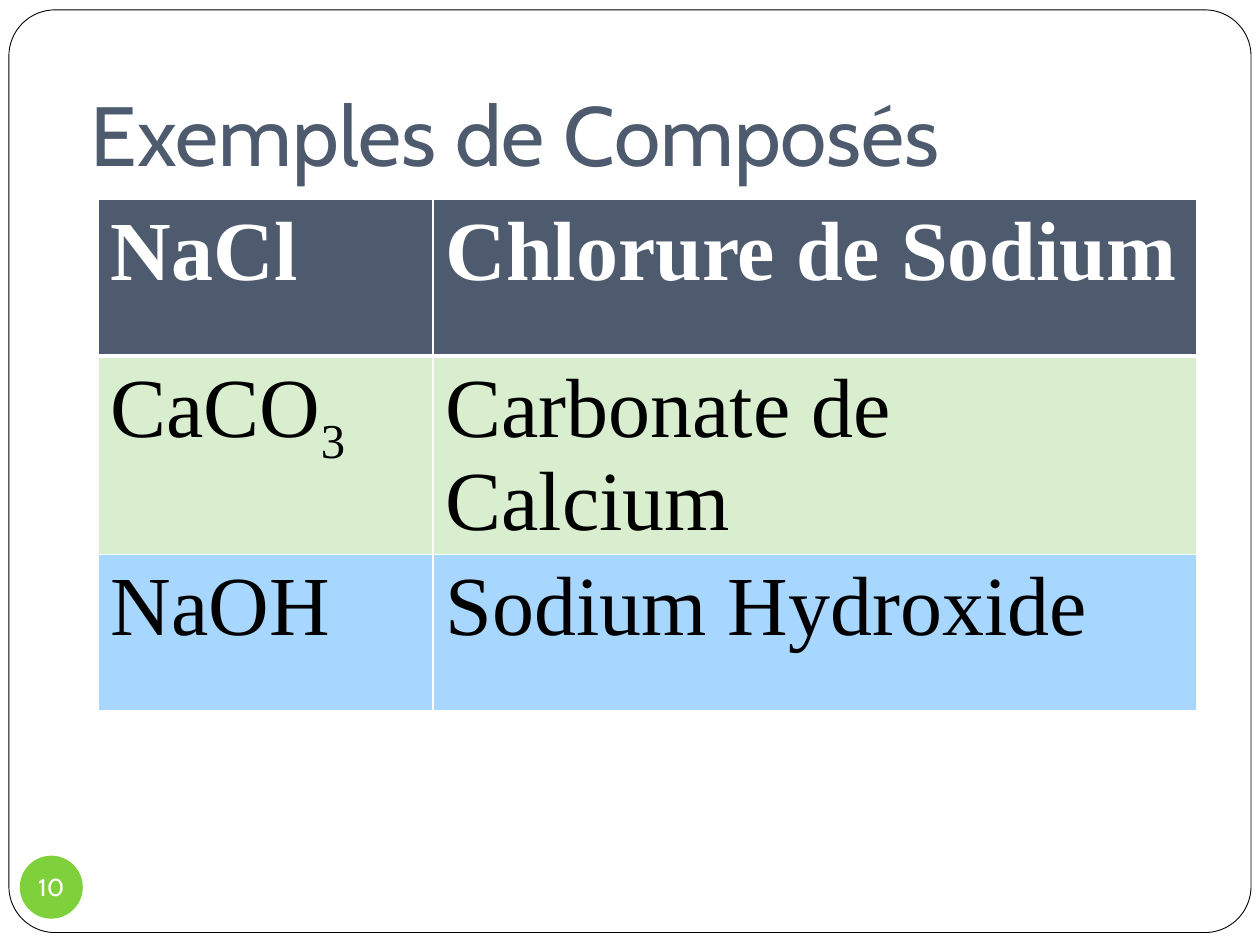
import pptx
import pptx.dml.color
import pptx.enum.shapes
import pptx.enum.text
import pptx.oxml
import pptx.oxml.ns
import pptx.util
from pptx.util import Cm

SLATE, GREEN, WHITE, BLACK = "4E5B6F", "7FD13B", "FFFFFF", "000000"
PALE_GREEN, PALE_BLUE = "D8EECE", "A7D6FF"
HEADING_FONT, TABLE_FONT = "Cabin", "Times New Roman"
# Each row: fill, text colour, bold, then cells of (text, subscript)
ROWS = [
    (SLATE, WHITE, True, [("NaCl", ""), ("Chlorure de Sodium", "")]),
    (PALE_GREEN, BLACK, False, [("CaCO", "3"), ("Carbonate de Calcium", "")]),
    (PALE_BLUE, BLACK, False, [("NaOH", ""), ("Sodium Hydroxide", "")]),
]


def color(value):
    return pptx.dml.color.RGBColor.from_string(value)


def add_text(paragraph, text, font, size, fill, bold=False, baseline=0):
    run = paragraph.add_run()
    run.text = text
    run.font.name = font
    run.font.size = pptx.util.Pt(size)
    run.font.bold = bold
    run.font.color.rgb = color(fill)
    if baseline:
        run.font._element.set("baseline", str(baseline * 1000))


def set_margins(text_frame, left, top, right, bottom):
    text_frame.margin_left, text_frame.margin_top = left, top
    text_frame.margin_right, text_frame.margin_bottom = right, bottom


def add_filled_shape(slide, kind, box, fill):
    shape = slide.shapes.add_shape(kind, *box)
    shape.shadow.inherit = False
    shape.fill.solid()
    shape.fill.fore_color.rgb = color(fill)
    shape.line.fill.background()
    return shape


def add_frame(slide, box):
    kind = pptx.enum.shapes.MSO_SHAPE.ROUNDED_RECTANGLE
    frame = add_filled_shape(slide, kind, box, WHITE)
    frame.adjustments[0] = 0.05
    frame.line.color.rgb = color(BLACK)
    frame.line.width = pptx.util.Pt(0.5)
    # Send behind the title placeholder
    frame._element.getparent().insert(2, frame._element)


def add_title(slide, box):
    title = slide.shapes.title
    title.left, title.top, title.width, title.height = box
    text_frame = title.text_frame
    text_frame.word_wrap = True
    text_frame.auto_size = pptx.enum.text.MSO_AUTO_SIZE.NONE
    text_frame.vertical_anchor = pptx.enum.text.MSO_ANCHOR.BOTTOM
    set_margins(text_frame, Cm(0.25), Cm(0.13), Cm(0.25), Cm(0.25))
    paragraph = text_frame.paragraphs[0]
    paragraph.alignment = pptx.enum.text.PP_ALIGN.LEFT
    add_text(paragraph, "Exemples de Composés", HEADING_FONT, 48, SLATE)


def set_borders(cell, top, bottom):
    properties = cell._tc.get_or_add_tcPr()
    widths = {"lnL": 1, "lnR": 1, "lnT": top, "lnB": bottom}
    for index, (side, width) in enumerate(widths.items()):
        properties.insert(index, pptx.oxml.parse_xml(
            f'<a:{side} {pptx.oxml.ns.nsdecls("a")} w="{pptx.util.Pt(width)}">'
            f'<a:solidFill><a:srgbClr val="{WHITE}"/></a:solidFill></a:{side}>'))


def add_compound_table(slide, box):
    left, top, width, height = box
    table = slide.shapes.add_table(len(ROWS), 2, left, top, width, height).table
    table.horz_banding = False
    table.columns[0].width = Cm(6.75)
    table.columns[1].width = width - Cm(6.75)
    for row, (fill, text_color, bold, compounds) in enumerate(ROWS):
        for column, (text, subscript) in enumerate(compounds):
            cell = table.cell(row, column)
            cell.fill.solid()
            cell.fill.fore_color.rgb = color(fill)
            # Thick rule under the header row
            set_borders(cell, 3 if row == 1 else 1, 3 if row == 0 else 1)
            paragraph = cell.text_frame.paragraphs[0]
            add_text(paragraph, text, TABLE_FONT, 48, text_color, bold)
            if subscript:
                add_text(paragraph, subscript, TABLE_FONT, 48, text_color, bold, baseline=-25)


def add_page_number(slide, box):
    badge = add_filled_shape(slide, pptx.enum.shapes.MSO_SHAPE.OVAL, box, GREEN)
    text_frame = badge.text_frame
    text_frame.word_wrap = False
    text_frame.vertical_anchor = pptx.enum.text.MSO_ANCHOR.MIDDLE
    set_margins(text_frame, 0, 0, 0, 0)
    paragraph = text_frame.paragraphs[0]
    paragraph.alignment = pptx.enum.text.PP_ALIGN.CENTER
    add_text(paragraph, "10", HEADING_FONT, 14, WHITE)


def main():
    presentation = pptx.Presentation()
    presentation.slide_width, presentation.slide_height = Cm(25.4), Cm(19.05)
    # Title-only layout
    slide = presentation.slides.add_slide(presentation.slide_layouts[5])
    add_frame(slide, (Cm(0.18), Cm(0.2), Cm(25.04), Cm(18.6)))
    add_title(slide, (Cm(1.58), Cm(0.76), Cm(22.55), Cm(3.18)))
    add_compound_table(slide, (Cm(1.98), Cm(4.02), Cm(22.15), Cm(9.47)))
    add_page_number(slide, (Cm(0.4), Cm(17.25), Cm(1.27), Cm(1.27)))
    presentation.save("out.pptx")


if __name__ == "__main__":
    main()
